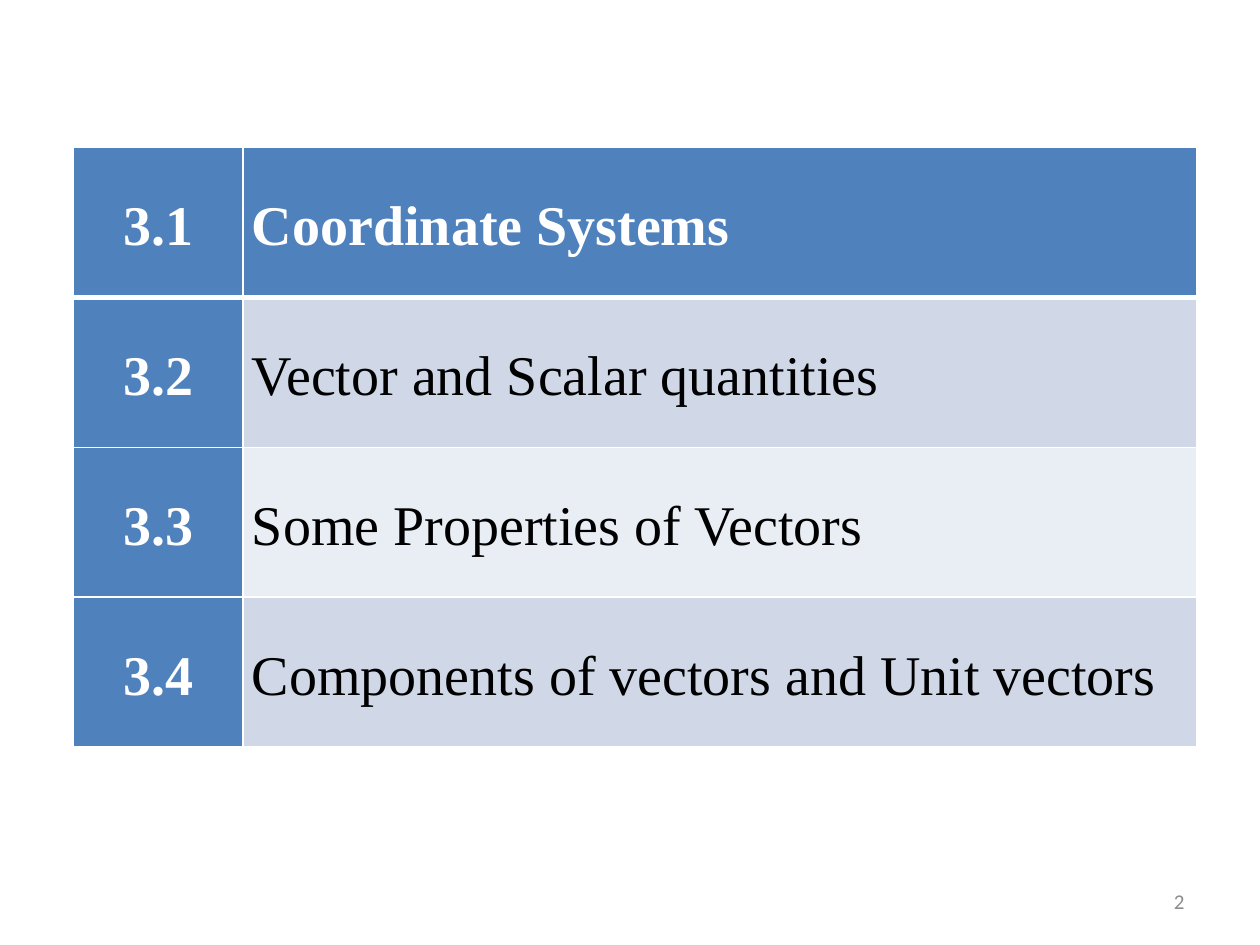
from lxml import etree
from pptx import Presentation
from pptx.dml.color import RGBColor
from pptx.enum.text import MSO_ANCHOR, PP_ALIGN
from pptx.oxml.ns import qn
from pptx.util import Pt

LEFT, CENTER, RIGHT = PP_ALIGN.LEFT, PP_ALIGN.CENTER, PP_ALIGN.RIGHT
MIDDLE = MSO_ANCHOR.MIDDLE

# Content
TOPICS = [
    ("3.1", "Coordinate Systems"),
    ("3.2", "Vector and Scalar quantities"),
    ("3.3", "Some Properties of Vectors"),
    ("3.4", "Components of vectors and Unit vectors"),
]
PAGE_NUMBER = "2"

# Layout and colours
TABLE_LEFT, TABLE_TOP = 42, 84.24
COLUMN_WIDTHS = (97, 545)
ROW_HEIGHT = 85.68
WHITE, BLACK, GRAY, BLUE = "FFFFFF", "000000", "8C8C8C", "4F81BD"
BANDS = ("E9EDF4", "D0D8E8")


def color(value):
    return RGBColor.from_string(value)


def style_paragraph(paragraph, font_name, size, text_color, alignment, bold=False):
    paragraph.alignment = alignment
    font = paragraph.font
    font.name, font.size, font.bold = font_name, Pt(size), bold
    font.color.rgb = color(text_color)


def add_border(cell, side, width):
    properties = cell._tc.get_or_add_tcPr()
    line = etree.SubElement(properties, qn(f"a:{side}"), w=str(Pt(width)))
    fill = etree.SubElement(line, qn("a:solidFill"))
    etree.SubElement(fill, qn("a:srgbClr"), val=WHITE)


def format_cell(cell, text, row, column):
    emphasized = row == 0 or column == 0
    cell.text = text
    cell.vertical_anchor = MIDDLE
    cell.margin_left = cell.margin_right = Pt(5)
    cell.margin_top = cell.margin_bottom = 0
    paragraph = cell.text_frame.paragraphs[0]
    paragraph.line_spacing = 1.15
    style_paragraph(paragraph, "Times New Roman", 32, WHITE if emphasized else BLACK,
                    LEFT if column else CENTER, emphasized)
    # Borders come before the fill in the cell properties
    widths = {"lnL": 1, "lnR": 1, "lnT": 3 if row == 1 else 1, "lnB": 3 if row == 0 else 1}
    for side, width in widths.items():
        add_border(cell, side, width)
    cell.fill.solid()
    cell.fill.fore_color.rgb = color(BLUE if emphasized else BANDS[row % 2])


presentation = Presentation()
presentation.slide_width, presentation.slide_height = Pt(720), Pt(540)
slide = presentation.slides.add_slide(presentation.slide_layouts[6])

# Page number
number_box = slide.shapes.add_textbox(Pt(516), Pt(500.5), Pt(168), Pt(28.75))
frame = number_box.text_frame
frame.word_wrap = True
frame.vertical_anchor = MIDDLE
frame.text = PAGE_NUMBER
style_paragraph(frame.paragraphs[0], "Calibri", 12, GRAY, RIGHT)

# Table of topics
table = slide.shapes.add_table(
    len(TOPICS), len(COLUMN_WIDTHS), Pt(TABLE_LEFT), Pt(TABLE_TOP),
    Pt(sum(COLUMN_WIDTHS)), Pt(ROW_HEIGHT * len(TOPICS))).table
table.first_col = True
for column, width in enumerate(COLUMN_WIDTHS):
    table.columns[column].width = Pt(width)
for row, topic in enumerate(TOPICS):
    table.rows[row].height = Pt(ROW_HEIGHT)
    for column, text in enumerate(topic):
        format_cell(table.cell(row, column), text, row, column)

presentation.save("out.pptx")
